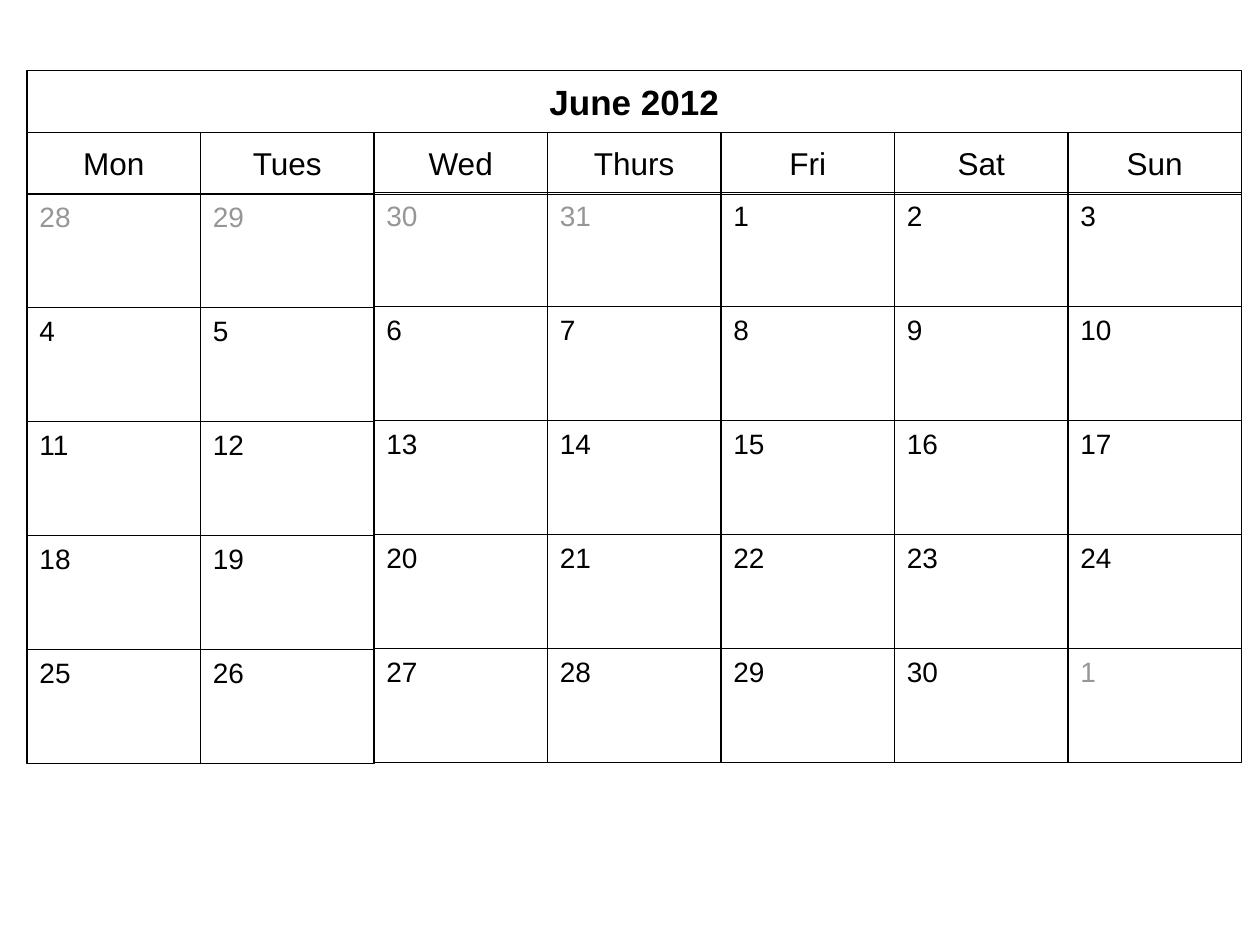
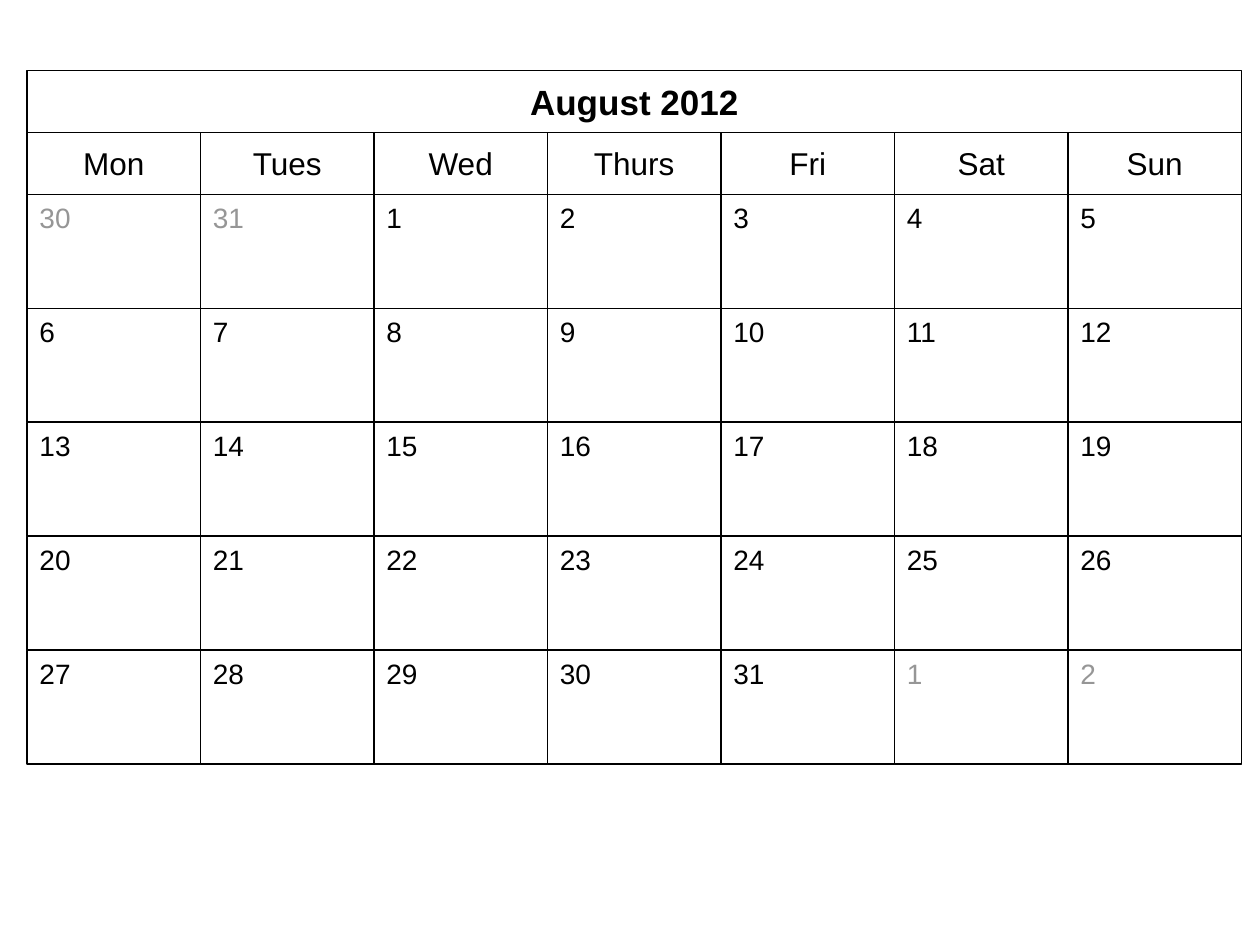
from pptx import Presentation
from pptx import util as u
from pptx.dml.color import RGBColor
from pptx.enum import shapes, text

# Scale: 576 px to the inch
PX = u.Inches(1) // 576
SLIDE_WIDTH, SLIDE_HEIGHT = 5760, 4320

# Shared style
BLACK = RGBColor(0x00, 0x00, 0x00)
GREY = RGBColor(0x96, 0x96, 0x96)
WHITE = RGBColor(0xFF, 0xFF, 0xFF)
FONT = "Arial"

# Calendar grid
WEEKDAYS = ["Mon", "Tues", "Wed", "Thurs", "Fri", "Sat", "Sun"]
LEFT, COLUMN_WIDTH = 124, 793
TITLE_TOP, BAND_HEIGHT = 322, 283
WEEKDAY_TOP = TITLE_TOP + BAND_HEIGHT
DAY_HEIGHT, WEEKS = 521, 5


class Calendar:
    """Holds the style and the current slide."""

    def __init__(self):
        self.presentation = Presentation()
        self.presentation.slide_width = SLIDE_WIDTH * PX
        self.presentation.slide_height = SLIDE_HEIGHT * PX
        self.slide = None

    def new_slide(self):
        blank = self.presentation.slide_layouts[6]
        self.slide = self.presentation.slides.add_slide(blank)

    def box(self, label, left, top, width, height, size, color=BLACK):
        shape = self.slide.shapes.add_shape(
            shapes.MSO_SHAPE.RECTANGLE,
            left * PX, top * PX, width * PX, height * PX)
        shape.shadow.inherit = False
        shape.fill.background()
        shape.line.color.rgb = BLACK
        shape.line.width = u.Pt(0.75)
        frame = shape.text_frame
        frame.word_wrap = True
        frame.vertical_anchor = text.MSO_ANCHOR.TOP
        paragraph = frame.paragraphs[0]
        paragraph.text = label
        paragraph.alignment = text.PP_ALIGN.LEFT
        paragraph.font.name = FONT
        paragraph.font.size = u.Pt(size)
        paragraph.font.color.rgb = color
        return shape

    def heading(self, label, left, top, width, size, bold=False):
        shape = self.box(label, left, top, width, BAND_HEIGHT, size)
        shape.fill.solid()
        shape.fill.fore_color.rgb = WHITE
        frame = shape.text_frame
        frame.vertical_anchor = text.MSO_ANCHOR.MIDDLE
        frame.margin_top = frame.margin_bottom = 12 * PX
        frame.paragraphs[0].alignment = text.PP_ALIGN.CENTER
        frame.paragraphs[0].font.bold = bold

    def day(self, number, column, top, in_month):
        self.box(str(number), LEFT + column * COLUMN_WIDTH, top,
                 COLUMN_WIDTH, DAY_HEIGHT, 16, BLACK if in_month else GREY)

    def month(self, title, first_column, previous_length, length, column_tops):
        self.new_slide()
        # Title and weekday bands
        self.heading(title, LEFT, TITLE_TOP, len(WEEKDAYS) * COLUMN_WIDTH,
                     20, bold=True)
        for column, weekday in enumerate(WEEKDAYS):
            self.heading(weekday, LEFT + column * COLUMN_WIDTH, WEEKDAY_TOP,
                         COLUMN_WIDTH, 18)
        # Days, with the ends of the neighbouring months in grey
        for cell in range(WEEKS * len(WEEKDAYS)):
            week, column = divmod(cell, len(WEEKDAYS))
            number = cell - first_column + 1
            in_month = 1 <= number <= length
            if number < 1:
                number += previous_length
            elif number > length:
                number -= length
            self.day(number, column, column_tops[column] + week * DAY_HEIGHT,
                     in_month)


def main():
    calendar = Calendar()
    # June: the first two columns sit slightly lower than the rest
    calendar.month("June 2012", 4, 31, 30, [885] * 2 + [881] * 5)
    calendar.month("August 2012", 2, 31, 31, [888] * 7)
    calendar.presentation.save("out.pptx")


if __name__ == "__main__":
    main()
